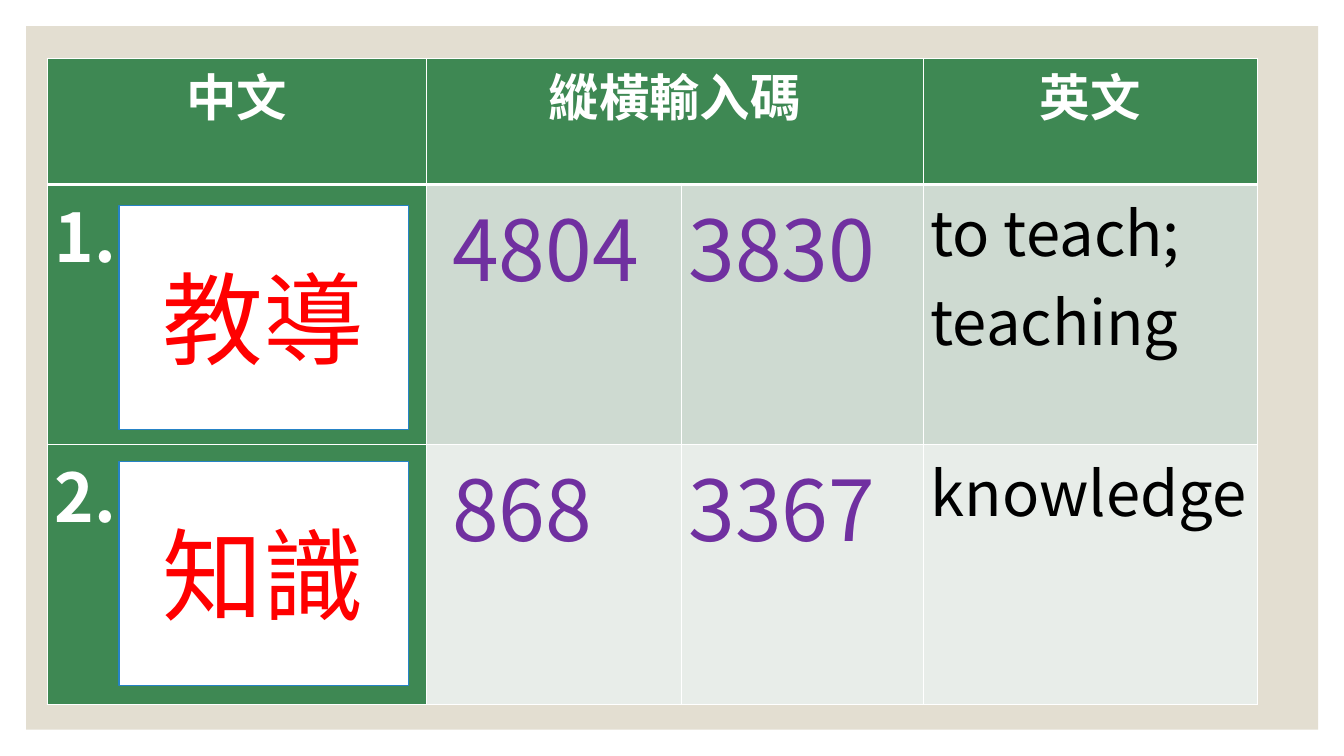
from lxml import etree
from pptx import Presentation
from pptx.dml.color import RGBColor
from pptx.enum import shapes, text
from pptx.oxml import ns
from pptx.util import Cm, Pt

FONT = "Noto Sans CJK SC"
COLORS = {
    "white": "FFFFFF", "black": "000000", "sand": "E3DED1", "green": "3E8853",
    "sage": "CEDAD1", "mist": "E8EDE9", "purple": "7030A0", "red": "FF0000",
    "blue": "2683C6",
}
HEADINGS = ["中文", "縱橫輸入碼", "", "英文"]
WORDS = [
    ("教導", ["1.", " 4804", "3830", "to teach; teaching"], "sage"),
    ("知識", ["2.", " 868", "3367", "knowledge"], "mist"),
]
# Size, colour and weight of each column in the word rows
COLUMN_STYLES = [(48, "white", True), (60, "purple", False),
                 (60, "purple", False), (44, "black", False)]
COLUMN_WIDTHS = [9.55, 6.43, 6.1, 8.41]
ROW_HEIGHTS = [3.18, 6.55, 6.55]


class VocabularySlide:
    def __init__(self, deck):
        self.slide = deck.slides.add_slide(deck.slide_layouts[6])

    def color(self, name):
        return RGBColor.from_string(COLORS[name])

    def label(self, frame, wording, size, color, bold=False, centered=False):
        frame.text = wording
        paragraph = frame.paragraphs[0]
        paragraph.alignment = (text.PP_ALIGN.CENTER if centered
                               else text.PP_ALIGN.LEFT)
        for run in paragraph.runs:
            font = run.font
            font.name, font.size, font.bold = FONT, Pt(size), bold
            font.color.rgb = self.color(color)
            latin = run._r.rPr.find(ns.qn("a:latin"))
            east_asian = etree.Element(ns.qn("a:ea"), typeface=FONT)
            latin.addnext(east_asian)

    def rectangle(self, left, top, width, height, fill, line=None):
        box = self.slide.shapes.add_shape(
            shapes.MSO_SHAPE.RECTANGLE, Cm(left), Cm(top), Cm(width), Cm(height))
        box.shadow.inherit = False
        box.fill.solid()
        box.fill.fore_color.rgb = self.color(fill)
        if line:
            box.line.color.rgb = self.color(line)
            box.line.width = Pt(1)
        else:
            box.line.fill.background()
        return box

    def word_card(self, left, top, word):
        card = self.rectangle(left, top, 7.29, 5.64, "white", "blue")
        card.text_frame.vertical_anchor = text.MSO_ANCHOR.MIDDLE
        self.label(card.text_frame, word, 72, "red", centered=True)

    def table(self, left, top):
        table = self.slide.shapes.add_table(
            len(ROW_HEIGHTS), len(COLUMN_WIDTHS), Cm(left), Cm(top),
            Cm(sum(COLUMN_WIDTHS)), Cm(sum(ROW_HEIGHTS))).table
        for column, width in zip(table.columns, COLUMN_WIDTHS):
            column.width = Cm(width)
        for row, height in zip(table.rows, ROW_HEIGHTS):
            row.height = Cm(height)
        return table

    def cell(self, cell, fill, top_border=1, bottom_border=1):
        cell.margin_left = cell.margin_right = Cm(0.18)
        cell.margin_top = cell.margin_bottom = 0
        borders = {"lnL": 1, "lnR": 1, "lnT": top_border, "lnB": bottom_border}
        for side, width in borders.items():
            line = etree.SubElement(cell._tc.get_or_add_tcPr(),
                                    ns.qn(f"a:{side}"), w=str(Pt(width)))
            solid = etree.SubElement(line, ns.qn("a:solidFill"))
            etree.SubElement(solid, ns.qn("a:srgbClr"), val=COLORS["white"])
        cell.fill.solid()
        cell.fill.fore_color.rgb = self.color(fill)


def main():
    deck = Presentation()
    deck.slide_width, deck.slide_height = Cm(33.87), Cm(19.05)
    page = VocabularySlide(deck)

    # Backdrop
    page.rectangle(0.66, 0.66, 32.56, 17.73, "sand")

    # Table heading
    table = page.table(1.19, 1.47)
    table.cell(0, 1).merge(table.cell(0, 2))
    for column, heading in enumerate(HEADINGS):
        cell = table.cell(0, column)
        page.cell(cell, "green", bottom_border=3)
        if heading:
            page.label(cell.text_frame, heading, 36, "white", True, centered=True)

    # Word rows, each with a card over its first column
    for row, (word, entries, shade) in enumerate(WORDS, start=1):
        for column, entry in enumerate(entries):
            cell = table.cell(row, column)
            page.cell(cell, shade if column else "green",
                      top_border=3 if row == 1 else 1)
            page.label(cell.text_frame, entry, *COLUMN_STYLES[column])
        page.word_card(3, 5.18 + 6.45 * (row - 1), word)

    deck.save("out.pptx")


if __name__ == "__main__":
    main()
